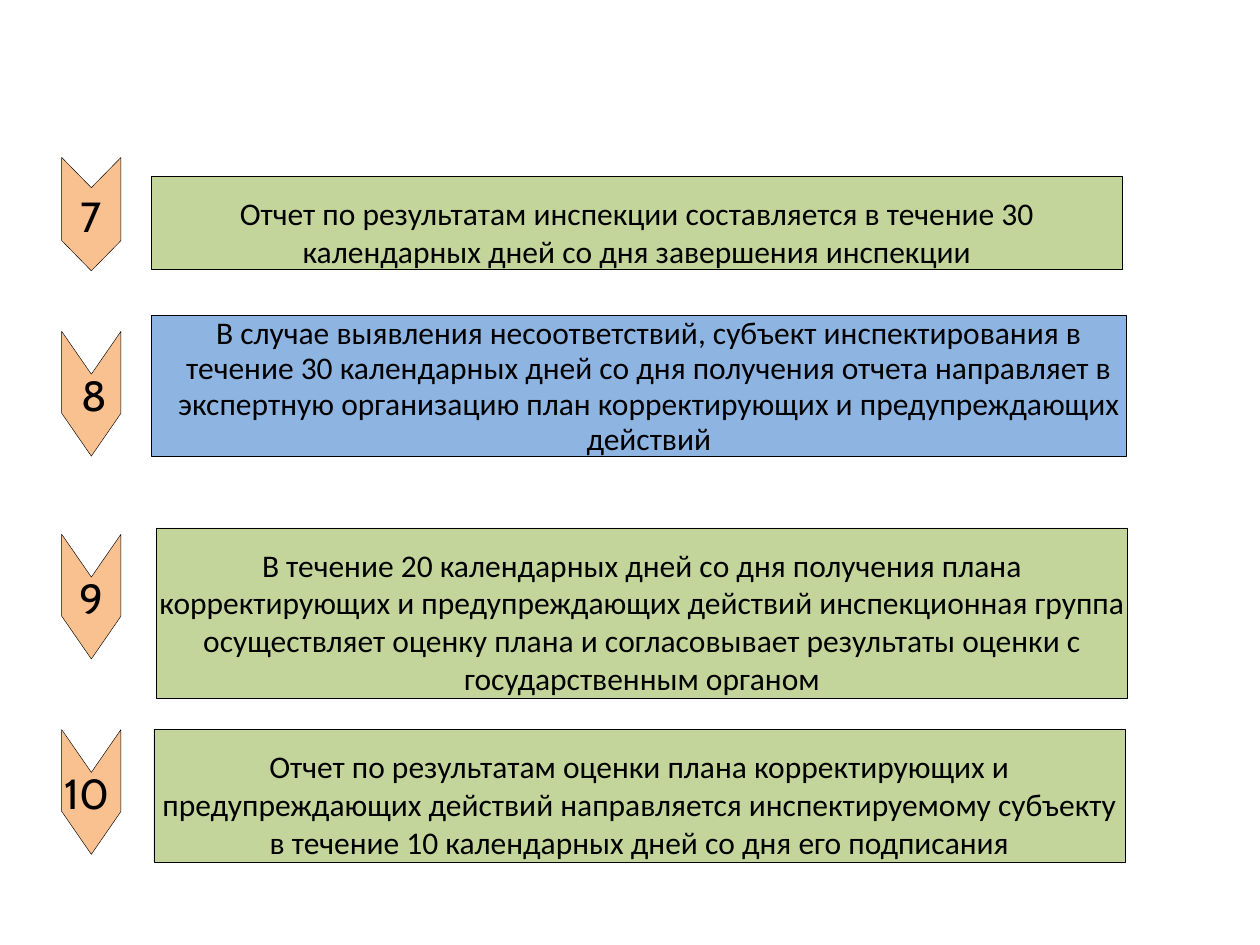
from dataclasses import dataclass

from pptx import Presentation
from pptx.dml.color import RGBColor
from pptx.enum.shapes import MSO_SHAPE
from pptx.enum.text import MSO_ANCHOR, MSO_AUTO_SIZE, PP_ALIGN
from pptx.shapes.autoshape import Shape
from pptx.slide import Slide
from pptx.util import Inches, Pt

COLORS = {"arrow": "F9C090", "green": "C3D59B", "blue": "8EB4E2", "black": "000000"}
ARROW_LEFT = 0.49
ARROW_WIDTH = 0.47
NUMBER_DROP = 0.29
NUMBER_HEIGHT = 0.42


@dataclass
class Arrow:
    top: float
    number: str
    number_left: float
    number_width: float = 0.2
    number_drop: float = NUMBER_DROP
    height: float = 0.99
    notch: float = 0.34


@dataclass
class Box:
    left: float
    top: float
    width: float
    height: float
    text: str
    color: str = "green"
    inset_left: float = 0
    inset_top: float = 0.14
    line_spacing: float | None = None


@dataclass
class Step:
    arrow: Arrow
    box: Box


STEPS = [
    Step(
        Arrow(1.25, "7", 0.63, number_drop=0.25, height=0.9, notch=0.24),
        Box(1.2, 1.4, 7.71, 0.74,
            "Отчет по результатам инспекции составляется в течение 30 "
            "календарных дней со дня завершения инспекции"),
    ),
    Step(
        Arrow(2.63, "8", 0.64),
        Box(1.2, 2.5, 7.74, 1.12,
            "В случае выявления несоответствий, субъект инспектирования в "
            "течение 30 календарных дней со дня получения отчета направляет в "
            "экспертную организацию план корректирующих и предупреждающих действий",
            color="blue", inset_left=0.16, inset_top=0, line_spacing=20.3),
    ),
    Step(
        Arrow(4.24, "9", 0.62),
        Box(1.24, 4.19, 7.71, 1.35,
            "В течение 20 календарных дней со дня получения плана "
            "корректирующих и предупреждающих действий инспекционная группа "
            "осуществляет оценку плана и согласовывает результаты оценки с "
            "государственным органом"),
    ),
    Step(
        Arrow(5.79, "10", 0.5, number_width=0.45),
        Box(1.22, 5.79, 7.71, 1.05,
            "Отчет по результатам оценки плана корректирующих и "
            "предупреждающих действий направляется инспектируемому субъекту "
            "в течение 10 календарных дней со дня его подписания"),
    ),
]


def rgb(name: str) -> RGBColor:
    return RGBColor.from_string(COLORS[name])


def style_shape(shape: Shape, color: str) -> None:
    shape.shadow.inherit = False
    shape.fill.solid()
    shape.fill.fore_color.rgb = rgb(color)
    shape.line.color.rgb = rgb("black")
    shape.line.width = Pt(0.25)


def write_text(shape: Shape, text: str, font_name: str, size: float,
               alignment: PP_ALIGN, inset_left: float, inset_top: float,
               line_spacing: float | None = None) -> None:
    text_frame = shape.text_frame
    text_frame.text = text
    text_frame.word_wrap = True
    text_frame.auto_size = MSO_AUTO_SIZE.SHAPE_TO_FIT_TEXT
    text_frame.vertical_anchor = MSO_ANCHOR.TOP
    text_frame.margin_left = Inches(inset_left)
    text_frame.margin_top = Inches(inset_top)
    text_frame.margin_right = text_frame.margin_bottom = 0
    paragraph = text_frame.paragraphs[0]
    paragraph.alignment = alignment
    if line_spacing:
        paragraph.line_spacing = Pt(line_spacing)
    font = paragraph.runs[0].font
    font.name = font_name
    font.size = Pt(size)
    font.color.rgb = rgb("black")


def draw_arrow(slide: Slide, arrow: Arrow) -> None:
    left, right = ARROW_LEFT, ARROW_LEFT + ARROW_WIDTH
    middle = (left + right) / 2
    bottom = arrow.top + arrow.height
    shoulder = bottom - arrow.notch
    points = [
        (middle, arrow.top + arrow.notch),
        (right, arrow.top),
        (right, shoulder),
        (middle, bottom),
        (left, shoulder),
    ]
    builder = slide.shapes.build_freeform(Inches(left), Inches(arrow.top))
    builder.add_line_segments([(Inches(x), Inches(y)) for x, y in points])
    style_shape(builder.convert_to_shape(), "arrow")

    number = slide.shapes.add_textbox(
        Inches(arrow.number_left), Inches(arrow.top + arrow.number_drop),
        Inches(arrow.number_width), Inches(NUMBER_HEIGHT))
    write_text(number, arrow.number, "Cabin", 24, PP_ALIGN.LEFT, 0.01, 0.01)


def draw_box(slide: Slide, box: Box) -> None:
    shape = slide.shapes.add_shape(
        MSO_SHAPE.RECTANGLE, Inches(box.left), Inches(box.top),
        Inches(box.width), Inches(box.height))
    style_shape(shape, box.color)
    write_text(shape, box.text, "Calibri", 18, PP_ALIGN.CENTER,
               box.inset_left, box.inset_top, box.line_spacing)


def main() -> None:
    presentation = Presentation()
    presentation.slide_width = Inches(10)
    presentation.slide_height = Inches(7.5)
    slide = presentation.slides.add_slide(presentation.slide_layouts[6])
    for step in STEPS:
        draw_arrow(slide, step.arrow)
        draw_box(slide, step.box)
    presentation.save("out.pptx")


if __name__ == "__main__":
    main()
